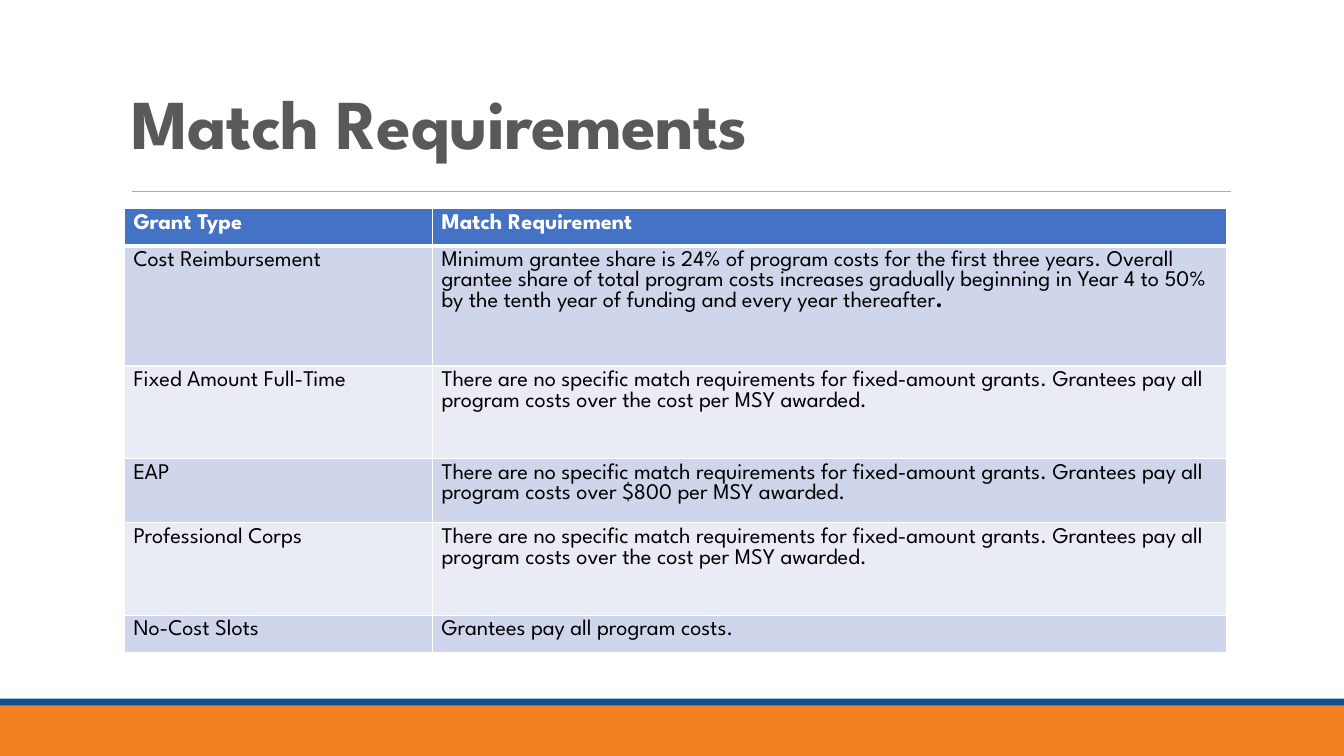
import pptx
import pptx.dml.color
import pptx.enum.shapes
import pptx.enum.text
import pptx.oxml.ns
import pptx.util
from lxml import etree

Pt = pptx.util.Pt
qn = pptx.oxml.ns.qn

# Content
TITLE = "Match Requirements"
HEADER = ("Grant Type", "Match Requirement")
FIXED = "There are no specific match requirements for fixed-amount grants. Grantees pay all program costs over "
GRANTS = [
    ("Cost Reimbursement",
     "Minimum grantee share is 24% of program costs for the first three years. "
     "Overall grantee share of total program costs increases gradually beginning "
     "in Year 4 to 50% by the tenth year of funding and every year thereafter"),
    ("Fixed Amount Full-Time", FIXED + "the cost per MSY awarded."),
    ("EAP", FIXED + "$800 per MSY awarded."),
    ("Professional Corps", FIXED + "the cost per MSY awarded."),
    ("No-Cost Slots", "Grantees pay all program costs."),
]
BOLD_STOP = "."  # closes the first requirement

# Style and layout
FONT = "League Spartan"
HEADER_FILL = "4472C4"
BANDS = ("CFD5EA", "E9EBF5")
SLIDE_W, SLIDE_H = 960, 540
FOOTER_H, STRIPE_H = 36, 5
TABLE_LEFT, TABLE_TOP = 88.9, 149.1
COLUMN_WIDTHS = (220, 567.4)
ROW_HEIGHTS = (26.4, 86, 66, 46, 66, 26.4)
THIN, THICK = 1.05, 3.15


def color(hex_code):
    return pptx.dml.color.RGBColor.from_string(hex_code)


def write(paragraph, text, size=16, ink="000000", bold=False, spacing=None):
    run = paragraph.add_run()
    run.text = text
    run.font.name = FONT
    run.font.size = Pt(size)
    run.font.bold = bold
    run.font.color.rgb = color(ink)
    if spacing is not None:
        run.font._element.set("spc", str(round(spacing * 100)))


def add_bar(top, height, fill):
    bar = slide.shapes.add_shape(pptx.enum.shapes.MSO_SHAPE.RECTANGLE,
                                 0, Pt(top), Pt(SLIDE_W), Pt(height))
    bar.shadow.inherit = False
    bar.fill.solid()
    bar.fill.fore_color.rgb = color(fill)
    bar.line.fill.background()


def set_borders(cell, widths):
    properties = cell._tc.get_or_add_tcPr()
    for position, (side, width) in enumerate(widths.items()):
        edge = etree.Element(qn("a:" + side), w=str(Pt(width)))
        solid = etree.SubElement(edge, qn("a:solidFill"))
        etree.SubElement(solid, qn("a:srgbClr"), val="FFFFFF")
        properties.insert(position, edge)


presentation = pptx.Presentation()
presentation.slide_width, presentation.slide_height = Pt(SLIDE_W), Pt(SLIDE_H)
slide = presentation.slides.add_slide(presentation.slide_layouts[6])

# Footer bars
footer_top = SLIDE_H - FOOTER_H
add_bar(footer_top, FOOTER_H, "F5801F")
add_bar(footer_top - STRIPE_H, STRIPE_H, "0D4E95")

# Title and rule
rule = slide.shapes.add_connector(pptx.enum.shapes.MSO_CONNECTOR.STRAIGHT,
                                  Pt(94.3), Pt(136.6), Pt(879), Pt(136.6))
rule.line.color.rgb = color("ACACAC")
rule.line.width = Pt(0.5)
etree.SubElement(rule._element.spPr, qn("a:effectLst"))

title = slide.shapes.add_textbox(Pt(86.6), Pt(52.6), Pt(792), Pt(67.7)).text_frame
title.word_wrap = True
title.vertical_anchor = pptx.enum.text.MSO_ANCHOR.BOTTOM
title.paragraphs[0].line_spacing = 0.85
write(title.paragraphs[0], TITLE, size=50, ink="595959", bold=True, spacing=-0.5)

# Table
rows = [HEADER] + GRANTS
match_table = slide.shapes.add_table(
    len(rows), len(HEADER), Pt(TABLE_LEFT), Pt(TABLE_TOP),
    Pt(sum(COLUMN_WIDTHS)), Pt(sum(ROW_HEIGHTS))).table
for column, width in zip(match_table.columns, COLUMN_WIDTHS):
    column.width = Pt(width)
for r, (texts, height) in enumerate(zip(rows, ROW_HEIGHTS)):
    match_table.rows[r].height = Pt(height)
    is_header = r == 0
    for c, text in enumerate(texts):
        cell = match_table.cell(r, c)
        cell.margin_left = cell.margin_right = Pt(6.5)
        cell.margin_top = cell.margin_bottom = Pt(3.6)
        cell.fill.solid()
        cell.fill.fore_color.rgb = color(HEADER_FILL if is_header else BANDS[(r - 1) % 2])
        set_borders(cell, {"lnL": THIN, "lnR": THIN,
                           "lnT": THICK if r == 1 else THIN,
                           "lnB": THICK if is_header else THIN})
        write(cell.text_frame.paragraphs[0], text,
              ink="FFFFFF" if is_header else "000000", bold=is_header)
write(match_table.cell(1, 1).text_frame.paragraphs[0], BOLD_STOP, bold=True)

presentation.save("out.pptx")
